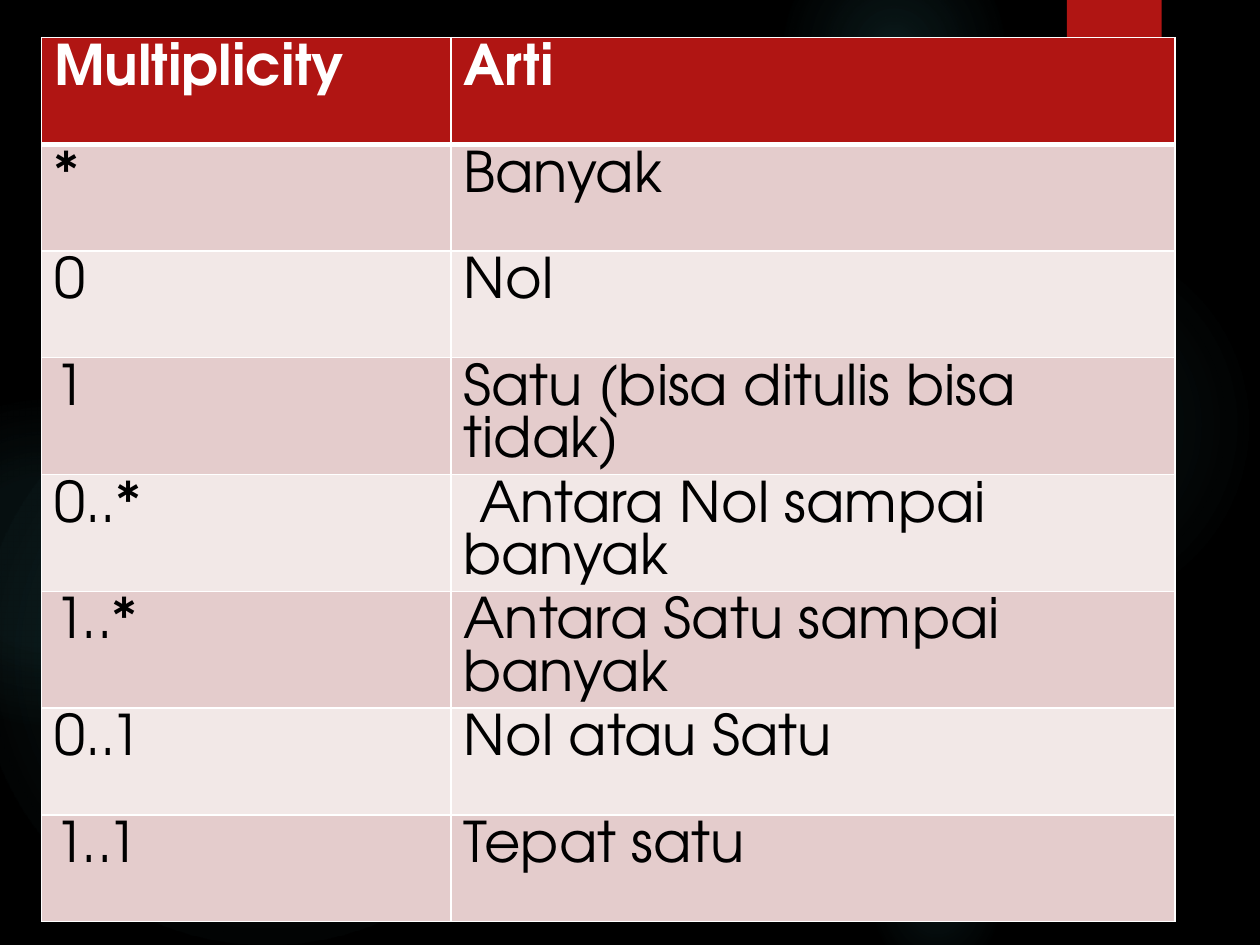
from lxml import etree
from pptx import Presentation
from pptx import util as u
from pptx.dml import color
from pptx.enum import shapes
from pptx.oxml import ns

FONT = "TeX Gyre Adventor"
RED, WHITE, BLACK, GLOW = "B01513", "FFFFFF", "000000", "50B9C1"
BANDS = ("E4CCCC", "F2E8E7")


def rgb(value):
    return color.RGBColor.from_string(value)


def add_color(parent, value, alpha=None):
    clr = etree.SubElement(parent, ns.qn("a:srgbClr"), val=value)
    if alpha is not None:
        etree.SubElement(clr, ns.qn("a:alpha"), val=str(alpha * 1000))


class Deck:
    def __init__(self, width, height):
        self.prs = Presentation()
        self.prs.slide_width, self.prs.slide_height = u.Cm(width), u.Cm(height)
        self.font, self.size = FONT, u.Pt(32)

    def slide(self, background):
        self.s = self.prs.slides.add_slide(self.prs.slide_layouts[6])
        fill = self.s.background.fill
        fill.solid()
        fill.fore_color.rgb = rgb(background)

    def shape(self, kind, left, top, width, height, fill=None):
        sp = self.s.shapes.add_shape(kind, *map(u.Cm, (left, top, width, height)))
        sp.shadow.inherit = False
        sp.line.fill.background()
        if fill:
            sp.fill.solid()
            sp.fill.fore_color.rgb = rgb(fill)
        else:
            sp.fill.background()
        return sp

    def glow(self, left, top, diameter, stops):
        """Circle that fades out from its centre; stops are (position, opacity)."""
        sp = self.shape(shapes.MSO_SHAPE.OVAL, left, top, diameter, diameter)
        grad = etree.Element(ns.qn("a:gradFill"), rotWithShape="1")
        gs_list = etree.SubElement(grad, ns.qn("a:gsLst"))
        for position, alpha in stops:
            gs = etree.SubElement(gs_list, ns.qn("a:gs"), pos=str(position * 1000))
            add_color(gs, GLOW, alpha)
        path = etree.SubElement(grad, ns.qn("a:path"), path="circle")
        etree.SubElement(path, ns.qn("a:fillToRect"),
                         dict.fromkeys("ltrb", "50000"))
        props = sp.element.spPr
        props.replace(props.find(ns.qn("a:noFill")), grad)

    def cell(self, cell, content, fill, ink, bold, bottom):
        # Borders come before the fill in the cell properties
        props = cell._tc.get_or_add_tcPr()
        for side, width in (("L", 1), ("R", 1), ("T", 1), ("B", bottom)):
            ln = etree.SubElement(props, ns.qn("a:ln" + side), w=str(u.Pt(width)))
            add_color(etree.SubElement(ln, ns.qn("a:solidFill")), WHITE)
        cell.fill.solid()
        cell.fill.fore_color.rgb = rgb(fill)
        r = cell.text_frame.paragraphs[0].add_run()
        r.text = content
        r.font.name, r.font.size, r.font.bold = self.font, self.size, bold
        r.font.color.rgb = rgb(ink)

    def table(self, left, top, widths, row_height, rows):
        frame = self.s.shapes.add_table(
            len(rows), len(widths), u.Cm(left), u.Cm(top),
            u.Cm(sum(widths)), u.Cm(row_height * len(rows)))
        tbl = frame.table
        for column, width in zip(tbl.columns, widths):
            column.width = u.Cm(width)
        for i, row in enumerate(rows):
            tbl.rows[i].height = u.Cm(row_height)
            head = i == 0
            for j, content in enumerate(row):
                self.cell(tbl.cell(i, j), content,
                          fill=RED if head else BANDS[(i - 1) % 2],
                          ink=WHITE if head else BLACK,
                          bold=head, bottom=3 if head else 1)


def main():
    deck = Deck(25.4, 19.05)
    deck.slide(BLACK)

    # Background glows
    for left, top, diameter, *stops in (
        (17.5, 4.65, 7.82, (0, 7), (36, 6), (69, 0)),
        (15.8, -1.27, 4.45, (0, 14), (36, 7), (73, 0)),
        (17.5, 16.94, 2.74, (0, 9), (36, 5), (66, 0)),
        (-0.43, 7.42, 11.63, (0, 11), (36, 10), (75, 0)),
        (-2.34, 8.05, 6.55, (0, 8), (36, 8), (72, 0)),
    ):
        deck.glow(left, top, diameter, stops)

    # Red tab at the top edge
    deck.shape(shapes.MSO_SHAPE.RECTANGLE, 21.51, 0, 1.91, 3.05, RED)

    # Multiplicity table
    deck.table(0.84, 0.76, (8.25, 14.6), 2.15, (
        ("Multiplicity", "Arti"),
        ("*", "Banyak"),
        ("0", "Nol"),
        ("1", "Satu (bisa ditulis bisa tidak)"),
        ("0..*", " Antara Nol sampai banyak"),
        ("1..*", "Antara Satu sampai banyak"),
        ("0..1", "Nol atau Satu"),
        ("1..1", "Tepat satu"),
    ))

    deck.prs.save("out.pptx")


if __name__ == "__main__":
    main()
